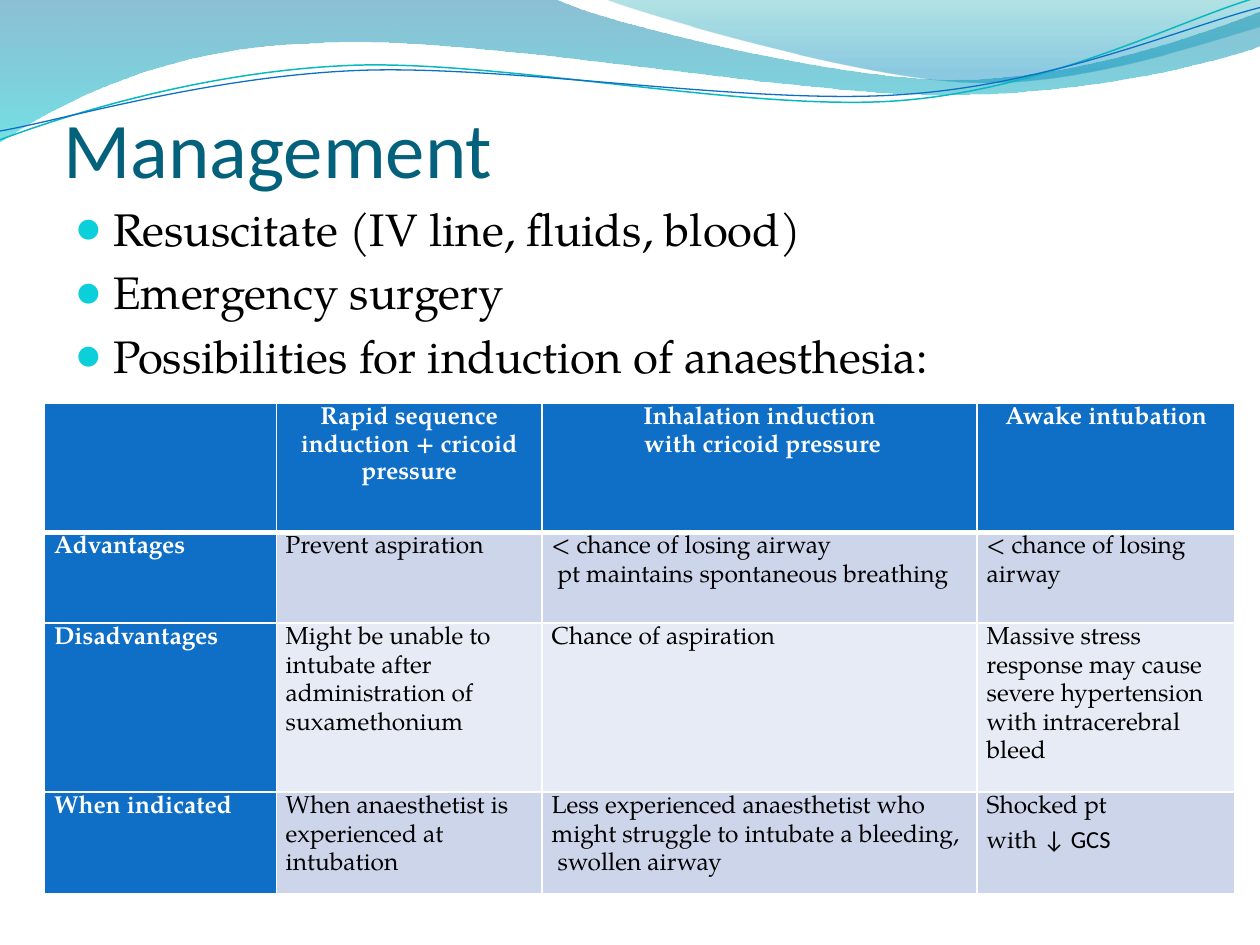
from lxml import etree
from pptx import Presentation
from pptx.dml.color import RGBColor
from pptx.enum.text import MSO_ANCHOR, PP_ALIGN
from pptx.oxml import parse_xml
from pptx.oxml.ns import nsdecls, qn
from pptx.util import Cm, Pt

BOTTOM = MSO_ANCHOR.BOTTOM
CENTER, LEFT = PP_ALIGN.CENTER, PP_ALIGN.LEFT
SERIF, SANS = "TeX Gyre Pagella", "Calibri"
COLORS = {
    "white": "FFFFFF", "black": "000000", "title": "04617B", "bullet": "0BD0D9",
    "blue": "0F6FC6", "teal": "0AB8BF", "band": "CCD5EA", "pale": "E7EBF5",
    "wave_top": "0074A1", "wave_bottom": "00C6CF",
    "crest_top": "00A1A9", "crest_bottom": "008BBF",
}
UNITS = 1000

WAVE = [(0, 0), (4.4, -0.01), (4.76, 0.17, 6.64, 0.63, 7.58, 0.63),
        (8.53, 0.63, 9.58, 0.26, 10, 0.09), (10.01, 0.36),
        (9.83, 0.44, 8.7, 0.76, 7.46, 0.75), (6.22, 0.75, 3.82, 0.28, 2.57, 0.34),
        (1.29, 0.36, 0.46, 0.83, -0.01, 1.13), (0, 0)]
CREST = [(4.79, -0.01), (5.09, 0.11, 6.82, 0.62, 7.69, 0.65),
         (8.56, 0.69, 9.61, 0.32, 10, 0.21), (10, 0), (4.79, -0.01)]
TEAL_LINE = [(0, 1.11), (0.48, 0.93, 1.58, 0.57, 2.77, 0.52),
             (3.95, 0.47, 5.93, 0.89, 7.13, 0.8), (8.33, 0.71, 9.38, 0.15, 9.98, -0.02)]
BLUE_LINE = [(0, 1.04), (0.47, 0.96, 1.64, 0.61, 2.83, 0.56),
             (4.03, 0.51, 5.97, 0.84, 7.17, 0.75), (8.36, 0.67, 9.41, 0.21, 10, 0.06)]

BULLETS = ["Resuscitate (IV line, fluids, blood)", "Emergency surgery",
           "Possibilities for induction of anaesthesia:"]
ROWS = [
    ["", "Rapid sequence induction + cricoid pressure",
     "Inhalation induction\n with cricoid pressure", "Awake intubation"],
    ["Advantages", "Prevent aspiration",
     "< chance of losing airway\n pt maintains spontaneous breathing",
     "< chance of losing airway"],
    ["Disadvantages", "Might be unable to intubate after administration of suxamethonium",
     "Chance of aspiration",
     "Massive stress response may cause severe hypertension with intracerebral bleed"],
    ["When indicated", "When anaesthetist is experienced at intubation",
     "Less experienced anaesthetist who\nmight struggle to intubate a bleeding,\n swollen airway",
     "Shocked pt\nwith ↓ GCS"],
]


def assign(obj, values):
    for name, value in values.items():
        setattr(obj, name, value)


def rgb(name):
    return RGBColor.from_string(COLORS[name])


class SlideWriter:
    body = {"size": Pt(26), "name": SERIF}
    cell = {"size": Pt(14), "name": SERIF}

    def __init__(self, slide):
        self.s = slide

    def run(self, p, text, font, color):
        r = p.add_run()
        r.text = text
        assign(r.font, font)
        r.font.color.rgb = rgb(color)

    def outline(self, segments, closed):
        points = [(round(x * UNITS), round(y * UNITS))
                  for seg in segments for x, y in zip(seg[::2], seg[1::2])]
        fb = self.s.shapes.build_freeform(*points[0], scale=Cm(2.54) / UNITS)
        fb.add_line_segments(points[1:], close=closed)
        sp = fb.convert_to_shape()
        sp.shadow.inherit = False
        lines = iter(list(sp._element.iter(qn("a:lnTo"))))
        for seg in segments[1:]:
            first = next(lines)
            if len(seg) == 6:
                first.tag = qn("a:cubicBezTo")
                for extra in (next(lines), next(lines)):
                    first.append(extra[0])
                    extra.getparent().remove(extra)
        return sp

    def wave(self, segments, stops):
        sp = self.outline(segments, True)
        sp.line.fill.background()
        gs = "".join(
            f'<a:gs pos="{pos * 1000}"><a:srgbClr val="{COLORS[c]}">'
            f'<a:alpha val="{alpha * 1000}"/></a:srgbClr></a:gs>' for pos, c, alpha in stops)
        grad = parse_xml(f'<a:gradFill {nsdecls("a")} rotWithShape="1"><a:gsLst>{gs}</a:gsLst>'
                         '<a:lin ang="5400000" scaled="0"/></a:gradFill>')
        sp._element.spPr.find(qn("a:custGeom")).addnext(grad)

    def curve(self, segments, color, width):
        sp = self.outline(segments, False)
        sp.fill.background()
        sp.line.color.rgb = rgb(color)
        sp.line.width = Pt(width)

    def textbox(self, box, frame):
        tf = self.s.shapes.add_textbox(*map(Cm, box)).text_frame
        assign(tf, {"word_wrap": True, **frame})
        return tf

    def title(self, text, box):
        tf = self.textbox(box, {"vertical_anchor": BOTTOM, "margin_left": 0,
                                "margin_right": 0, "margin_bottom": 0})
        self.run(tf.paragraphs[0], text, {"size": Pt(45), "name": SANS}, "title")

    def bullets(self, items, box):
        tf = self.textbox(box, {})
        for i, text in enumerate(items):
            p = tf.add_paragraph() if i else tf.paragraphs[0]
            p.space_before = Pt(5.2)
            pPr = p._p.get_or_add_pPr()
            pPr.set("marL", str(Cm(0.76)))
            pPr.set("indent", str(-Cm(0.76)))
            color = etree.SubElement(pPr, qn("a:buClr"))
            etree.SubElement(color, qn("a:srgbClr"), val=COLORS["bullet"])
            etree.SubElement(pPr, qn("a:buSzPct"), val="95000")
            etree.SubElement(pPr, qn("a:buFont"), typeface=SANS)
            etree.SubElement(pPr, qn("a:buChar"), char="●")
            self.run(p, text, self.body, "black")

    def borders(self, cell, widths):
        tcPr = cell._tc.get_or_add_tcPr()
        for i, (side, width) in enumerate(widths.items()):
            tcPr.insert(i, parse_xml(
                f'<a:{side} {nsdecls("a")} w="{Pt(width)}"><a:solidFill>'
                f'<a:srgbClr val="{COLORS["white"]}"/></a:solidFill></a:{side}>'))

    def fill_cell(self, cell, text, row, col):
        head = row == 0 or col == 0
        assign(cell, {"margin_left": Cm(0.19), "margin_right": Cm(0.19),
                      "margin_top": 0, "margin_bottom": 0})
        cell.fill.solid()
        cell.fill.fore_color.rgb = rgb("blue" if head else "band" if row % 2 else "pale")
        self.borders(cell, {"lnL": 1, "lnR": 1, "lnT": 3 if row == 1 else 1,
                            "lnB": 3 if row == 0 else 1})
        tf = cell.text_frame
        for i, line in enumerate(text.split("\n")):
            p = tf.add_paragraph() if i else tf.paragraphs[0]
            assign(p, {"alignment": LEFT if row else CENTER, "line_spacing": 1.15})
            before, arrow, after = line.partition("↓")
            for part, name in ((before, SERIF), (arrow + after, SANS)):
                if part:
                    self.run(p, part, {**self.cell, "name": name, "bold": head},
                             "white" if head else "black")

    def table(self, rows, box, widths, heights):
        frame = self.s.shapes.add_table(len(rows), len(widths), *map(Cm, box))
        table = frame.table
        for column, width in zip(table.columns, widths):
            column.width = Cm(width)
        for i, (row, height) in enumerate(zip(rows, heights)):
            table.rows[i].height = Cm(height)
            for j, text in enumerate(row):
                self.fill_cell(table.cell(i, j), text, i, j)
        frame.height = Cm(box[3])


def main():
    prs = Presentation()
    prs.slide_width, prs.slide_height = Cm(25.4), Cm(19.05)
    w = SlideWriter(prs.slides.add_slide(prs.slide_layouts[6]))
    w.wave(WAVE, [(0, "wave_top", 45), (100, "wave_bottom", 55)])
    w.wave(CREST, [(0, "crest_top", 30), (80, "crest_bottom", 45)])
    w.curve(TEAL_LINE, "teal", 0.85)
    w.curve(BLUE_LINE, "blue", 0.75)
    w.title("Management", (1.28, 1.94, 22.86, 1.98))
    w.bullets(BULLETS, (1.27, 3.92, 22.86, 13.64))
    w.table(ROWS, (0.9, 8.13, 24, 9.88), (4.67, 5.36, 8.77, 5.2), (2.6, 1.83, 0, 0))
    prs.save("out.pptx")


if __name__ == "__main__":
    main()
